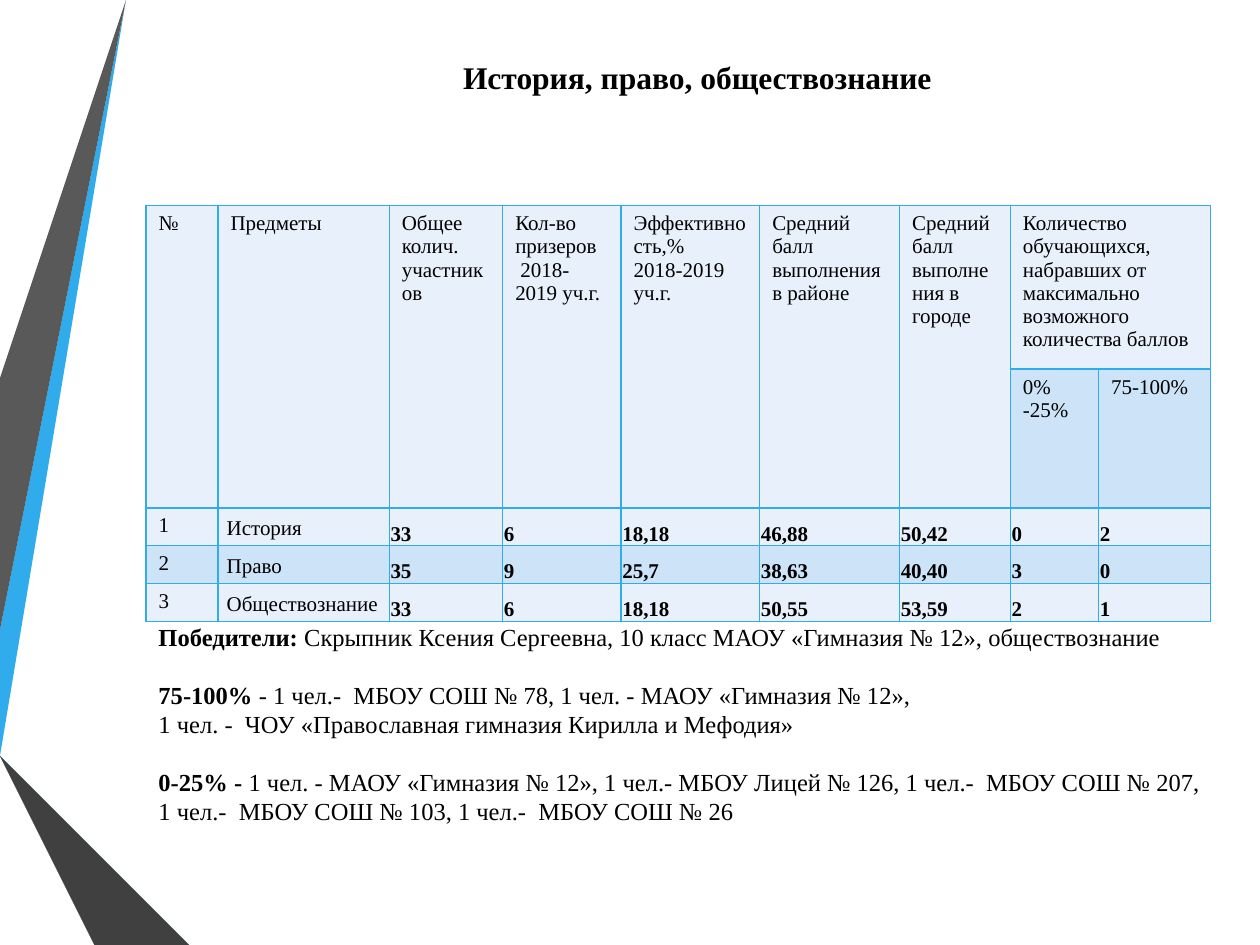
"""Build the slide with olympiad results in history, law and social studies."""
import lxml.etree
import pptx
import pptx.dml.color
import pptx.enum.text
import pptx.oxml.ns
import pptx.util

Inches = pptx.util.Inches
Anchor = pptx.enum.text.MSO_ANCHOR

FONT = "Times New Roman"
BLUE, LIGHT, BAND = "30ACEC", "E8F1FB", "CDE3F8"

RIBBONS = [
    (BLUE, [(0, 5.44), (0, 5.75), (0.22, 5.79), (1.17, 0), (0.89, 0)]),
    ("595959", [(0.83, 0), (0.55, 0), (0, 3.36), (0, 5.06)]),
    ("262626", [(0, 6.19), (0, 6.21), (0.93, 7.5), (0.99, 7.5)]),
    ("0C5A82", [(0, 5.79), (0, 5.8), (1.56, 7.5), (1.63, 7.5)]),
    ("1287C3", [(0, 5.79), (1.63, 7.5), (2.33, 7.5), (0.22, 5.79), (0, 5.75)]),
    ("404040", [(0, 6.19), (0.99, 7.5), (1.51, 7.5), (0, 5.86)]),
]
TITLE = "История, право, обществознание"
HEADERS = [
    ["№"],
    ["Предметы"],
    ["Общее колич. участников"],
    ["Кол-во призеров", " 2018-2019 уч.г."],
    ["Эффективность,%", "2018-2019 уч.г."],
    ["Средний балл выполнения в районе"],
    ["Средний балл выполнения в городе"],
    ["Количество обучающихся, набравших от максимально возможного количества баллов"],
]
SUBHEADERS = ["0% -25%", "75-100%"]
RESULTS = [
    ("1", "История", "33", "6", "18,18", "46,88", "50,42", "0", "2"),
    ("2", "Право", "35", "9", "25,7", "38,63", "40,40", "3", "0"),
    ("3", "Обществознание", "33", "6", "18,18", "50,55", "53,59", "2", "1"),
]
COLUMN_WIDTHS = [0.57, 1.36, 0.9, 0.94, 1.1, 1.11, 0.88, 0.7, 0.89]
ROW_HEIGHTS = [1.3, 1.1, 0.3, 0.3, 0.3]
NOTES = [
    (0, "Победители: ", "Скрыпник Ксения Сергеевна, 10 класс МАОУ «Гимназия № 12», обществознание"),
    (16, "75-100% ", "- 1 чел.-  МБОУ СОШ № 78, 1 чел. - МАОУ «Гимназия № 12»,"),
    (0, "", "1 чел. -  ЧОУ «Православная гимназия Кирилла и Мефодия»"),
    (16, "0-25% - ", "1 чел. - МАОУ «Гимназия № 12», 1 чел.- МБОУ Лицей № 126, 1 чел.-  МБОУ СОШ № 207, "
     "1 чел.-  МБОУ СОШ № 103, 1 чел.-  МБОУ СОШ № 26"),
]


def color(value):
    return pptx.dml.color.RGBColor.from_string(value)


def add_run(paragraph, text, size, bold=False):
    run = paragraph.add_run()
    run.text = text
    run.font.name = FONT
    run.font.size = pptx.util.Pt(size)
    run.font.bold = bold
    run.font.color.rgb = color("000000")


def add_ribbon(slide, fill, points):
    builder = slide.shapes.build_freeform(*points[0], scale=Inches(1))
    builder.add_line_segments(points[1:], close=True)
    shape = builder.convert_to_shape()
    shape.shadow.inherit = False
    shape.fill.solid()
    shape.fill.fore_color.rgb = color(fill)
    shape.line.fill.background()


def add_text_box(slide, *box):
    frame = slide.shapes.add_textbox(*map(Inches, box)).text_frame
    frame.word_wrap = True
    return frame


def style_cell(cell, fill):
    properties = cell._tc.get_or_add_tcPr()
    for side in ("a:lnL", "a:lnR", "a:lnT", "a:lnB"):
        line = lxml.etree.SubElement(properties, pptx.oxml.ns.qn(side), w="12700")
        solid = lxml.etree.SubElement(line, pptx.oxml.ns.qn("a:solidFill"))
        lxml.etree.SubElement(solid, pptx.oxml.ns.qn("a:srgbClr"), val=BLUE)
    cell.fill.solid()
    cell.fill.fore_color.rgb = color(fill)


def fill_cell(cell, lines, bold=False):
    for index, line in enumerate(lines):
        frame = cell.text_frame
        paragraph = frame.add_paragraph() if index else frame.paragraphs[0]
        add_run(paragraph, line, 12, bold)


def set_margins(cell, side, top, anchor):
    cell.margin_left = cell.margin_right = Inches(side)
    cell.margin_top, cell.margin_bottom = Inches(top), 0
    cell.vertical_anchor = anchor


def add_results_table(slide):
    table = slide.shapes.add_table(
        len(ROW_HEIGHTS), len(COLUMN_WIDTHS), Inches(1.16), Inches(1.63),
        Inches(sum(COLUMN_WIDTHS)), Inches(sum(ROW_HEIGHTS))).table
    table.first_row = table.horz_banding = False
    for column, width in zip(table.columns, COLUMN_WIDTHS):
        column.width = Inches(width)
    for index, (row, height) in enumerate(zip(table.rows, ROW_HEIGHTS)):
        row.height = Inches(height)
        for cell in row.cells:
            style_cell(cell, BAND if index % 2 else LIGHT)

    last = len(HEADERS) - 1
    for column, lines in enumerate(HEADERS):
        end = (0, column + 1) if column == last else (1, column)
        table.cell(0, column).merge(table.cell(*end))
        fill_cell(table.cell(0, column), lines)
    for column, text in enumerate(SUBHEADERS, last):
        fill_cell(table.cell(1, column), [text])

    for row, values in enumerate(RESULTS, 2):
        for column, text in enumerate(values):
            cell = table.cell(row, column)
            fill_cell(cell, [text], bold=column > 1)
            if column == 1:
                set_margins(cell, 0.07, 0, Anchor.MIDDLE)
                cell.text_frame.paragraphs[0].line_spacing = 1.15
            elif column > 1:
                set_margins(cell, 0.01, 0.01, Anchor.BOTTOM)


def main():
    presentation = pptx.Presentation()
    presentation.slide_width, presentation.slide_height = Inches(10), Inches(7.5)
    slide = presentation.slides.add_slide(presentation.slide_layouts[6])

    for fill, points in RIBBONS:
        add_ribbon(slide, fill, points)

    paragraph = add_text_box(slide, 2.79, 0.34, 5, 0.44).paragraphs[0]
    paragraph.alignment = pptx.enum.text.PP_ALIGN.CENTER
    paragraph.line_spacing = 1.25
    paragraph._p.get_or_add_pPr().set("indent", str(Inches(0.49)))
    add_run(paragraph, TITLE, 18, bold=True)

    add_results_table(slide)

    frame = add_text_box(slide, 1.16, 4.89, 8.47, 1.99)
    for index, (space, label, text) in enumerate(NOTES):
        paragraph = frame.add_paragraph() if index else frame.paragraphs[0]
        paragraph.space_before = pptx.util.Pt(space)
        if label:
            add_run(paragraph, label, 14, bold=True)
        add_run(paragraph, text, 14)

    presentation.save("out.pptx")


if __name__ == "__main__":
    main()
